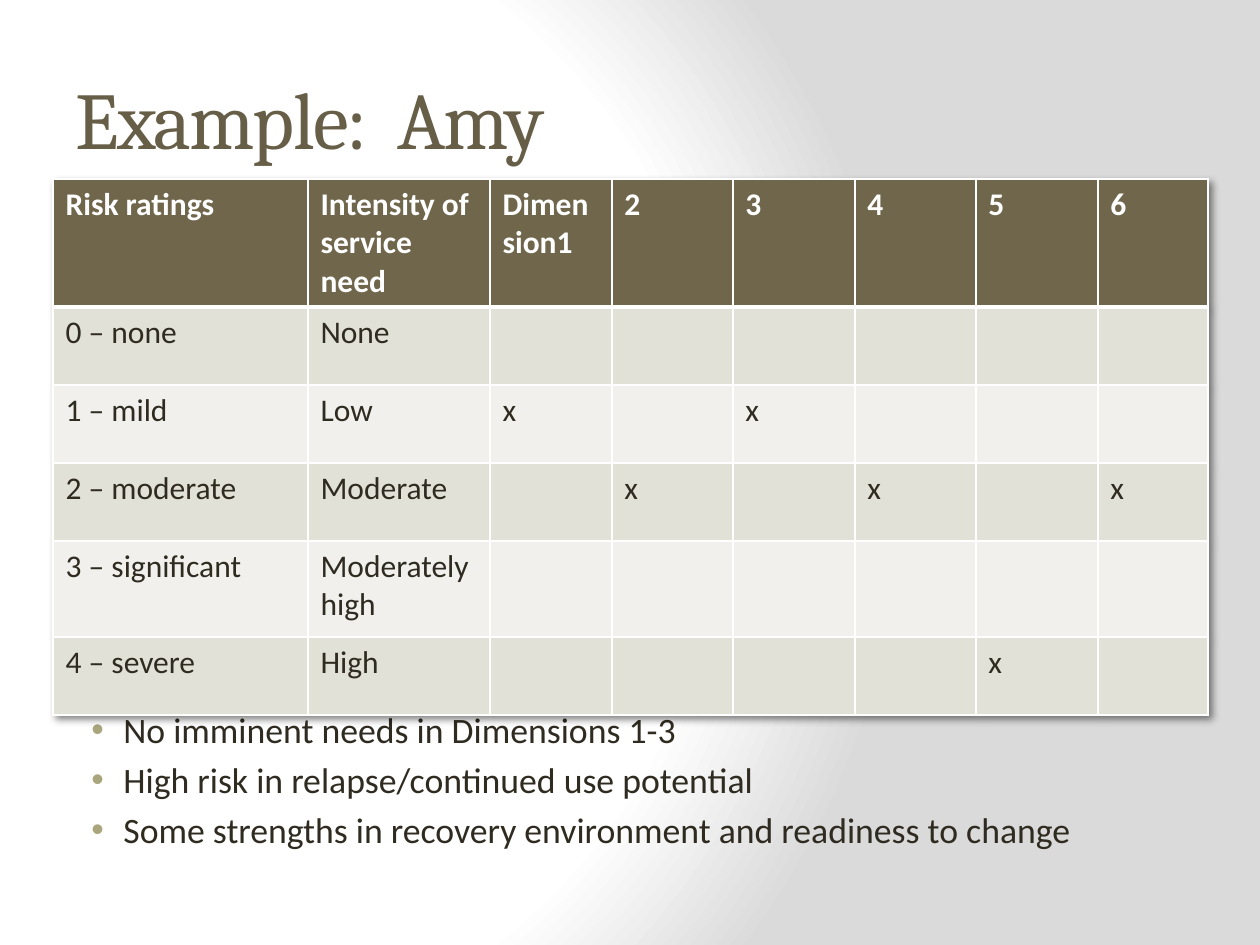
from typing import NamedTuple

from pptx import Presentation
from pptx.dml.color import RGBColor
from pptx.enum.text import MSO_ANCHOR as Anchor
from pptx.oxml import parse_xml
from pptx.oxml.ns import nsdecls
from pptx.util import Pt

SCALE = 914400 / 126
INK, WHITE, HEAD, BANDS = "2F2B20", "FFFFFF", "6F664C", ("E2E1D7", "F1F0EC")


class Box(NamedTuple):
    left: int
    top: int
    width: int
    height: int


class Row(NamedTuple):
    height: int
    cells: tuple[str, ...]


ROWS = (
    Row(128, ("Risk ratings", "Intensity of service need", "Dimension1", "2", "3", "4", "5", "6")),
    Row(78, ("0 – none", "None", "", "", "", "", "", "")),
    Row(78, ("1 – mild", "Low", "x", "", "x", "", "", "")),
    Row(78, ("2 – moderate", "Moderate", "", "x", "", "x", "", "x")),
    Row(96, ("3 – significant", "Moderately high", "", "", "", "", "", "")),
    Row(78, ("4 – severe", "High", "", "", "", "", "x", "")),
)
COLS = (255, 182, 122, 121, 122, 121, 122, 110)
NOTES = (
    "No imminent needs in Dimensions 1-3",
    "High risk in relapse/continued use potential",
    "Some strengths in recovery environment and readiness to change",
)
TITLE = {"name": "Cambria", "size": Pt(46), "bold": False}
BODY = {"name": "Calibri", "size": Pt(20.4), "bold": False}
CELL = {"name": "Calibri", "size": Pt(18), "bold": False}


def emu(px: int) -> int:
    return round(px * SCALE)


def rgb(code: str) -> RGBColor:
    return RGBColor.from_string(code)


def node(xml: str):
    """Make an element from XML whose root tag ends in {ns}."""
    return parse_xml(xml.replace("{ns}", nsdecls("a", "p")))


def style(font, look: dict, color: str) -> None:
    for key, value in look.items():
        setattr(font, key, value)
    font.color.rgb = rgb(color)


def paint(slide) -> None:
    """Give the slide its radial white to grey background."""
    stops = "".join(
        f'<a:gs pos="{pos}000"><a:srgbClr val="{code}"/></a:gs>'
        for pos, code in ((0, WHITE), (75, WHITE), (100, "DADADA"))
    )
    slide.element.cSld.insert(0, node(
        f'<p:bg {{ns}}><p:bgPr><a:gradFill rotWithShape="1"><a:gsLst>{stops}</a:gsLst>'
        '<a:path path="circle"><a:fillToRect l="20000" t="50000" r="100000" b="50000"/></a:path>'
        '</a:gradFill><a:effectLst/></p:bgPr></p:bg>'))


def add_text(slide, box: Box, anchor: Anchor):
    frame = slide.shapes.add_textbox(*map(emu, box)).text_frame
    frame.word_wrap = True
    frame.vertical_anchor = anchor
    return frame


def add_title(slide) -> None:
    frame = add_text(slide, Box(63, 38, 1050, 158), Anchor.MIDDLE)
    run = frame.paragraphs[0].add_run()
    run.text = "Example:  Amy"
    style(run.font, TITLE, "675E47")
    run.font._element.set("spc", "-100")


def add_notes(slide) -> None:
    frame = add_text(slide, Box(63, 702, 1050, 180), Anchor.TOP)
    for i, text in enumerate(NOTES):
        para = frame.add_paragraph() if i else frame.paragraphs[0]
        para.space_before = Pt(4)
        run = para.add_run()
        run.text = text
        style(run.font, BODY, INK)
        props = para._p.get_or_add_pPr()
        props.set("marL", str(emu(48)))
        props.set("indent", str(emu(-32)))
        props.append(node('<a:buClr {ns}><a:srgbClr val="A9A57C"/></a:buClr>'))
        props.append(node('<a:buFont {ns} typeface="Arial"/>'))
        props.append(node('<a:buChar {ns} char="•"/>'))


def edge(cell, side: str, width: int) -> None:
    cell._tc.get_or_add_tcPr().append(node(
        f'<a:ln{side} {{ns}} w="{Pt(width)}"><a:solidFill><a:srgbClr val="{WHITE}"/>'
        f'</a:solidFill></a:ln{side}>'))


def fill_cell(cell, text: str, row: int) -> None:
    widths = {"L": 1, "R": 1, "T": 3 if row == 1 else 1, "B": 1 if row else 3}
    for side, width in widths.items():
        edge(cell, side, width)
    cell.fill.solid()
    cell.fill.fore_color.rgb = rgb(BANDS[(row - 1) % 2] if row else HEAD)
    para = cell.text_frame.paragraphs[0]
    if not text:
        para.font.size = CELL["size"]
        return
    run = para.add_run()
    run.text = text
    style(run.font, CELL | {"bold": row == 0}, INK if row else WHITE)


def add_grid(slide) -> None:
    box = Box(53, 179, sum(COLS), sum(row.height for row in ROWS))
    table = slide.shapes.add_table(len(ROWS), len(COLS), *map(emu, box)).table
    table._tbl.tblPr.insert(0, node(
        '<a:effectLst {ns}><a:outerShdw blurRad="50800" dist="38100" dir="2700000">'
        '<a:srgbClr val="000000"><a:alpha val="50000"/></a:srgbClr></a:outerShdw></a:effectLst>'))
    for col, width in zip(table.columns, COLS):
        col.width = emu(width)
    for i, row in enumerate(ROWS):
        table.rows[i].height = emu(row.height)
        for j, text in enumerate(row.cells):
            fill_cell(table.cell(i, j), text, i)


def main() -> None:
    deck = Presentation()
    deck.slide_width, deck.slide_height = emu(1260), emu(945)
    slide = deck.slides.add_slide(deck.slide_layouts[6])
    paint(slide)
    add_title(slide)
    add_notes(slide)
    add_grid(slide)
    deck.save("out.pptx")


if __name__ == "__main__":
    main()
